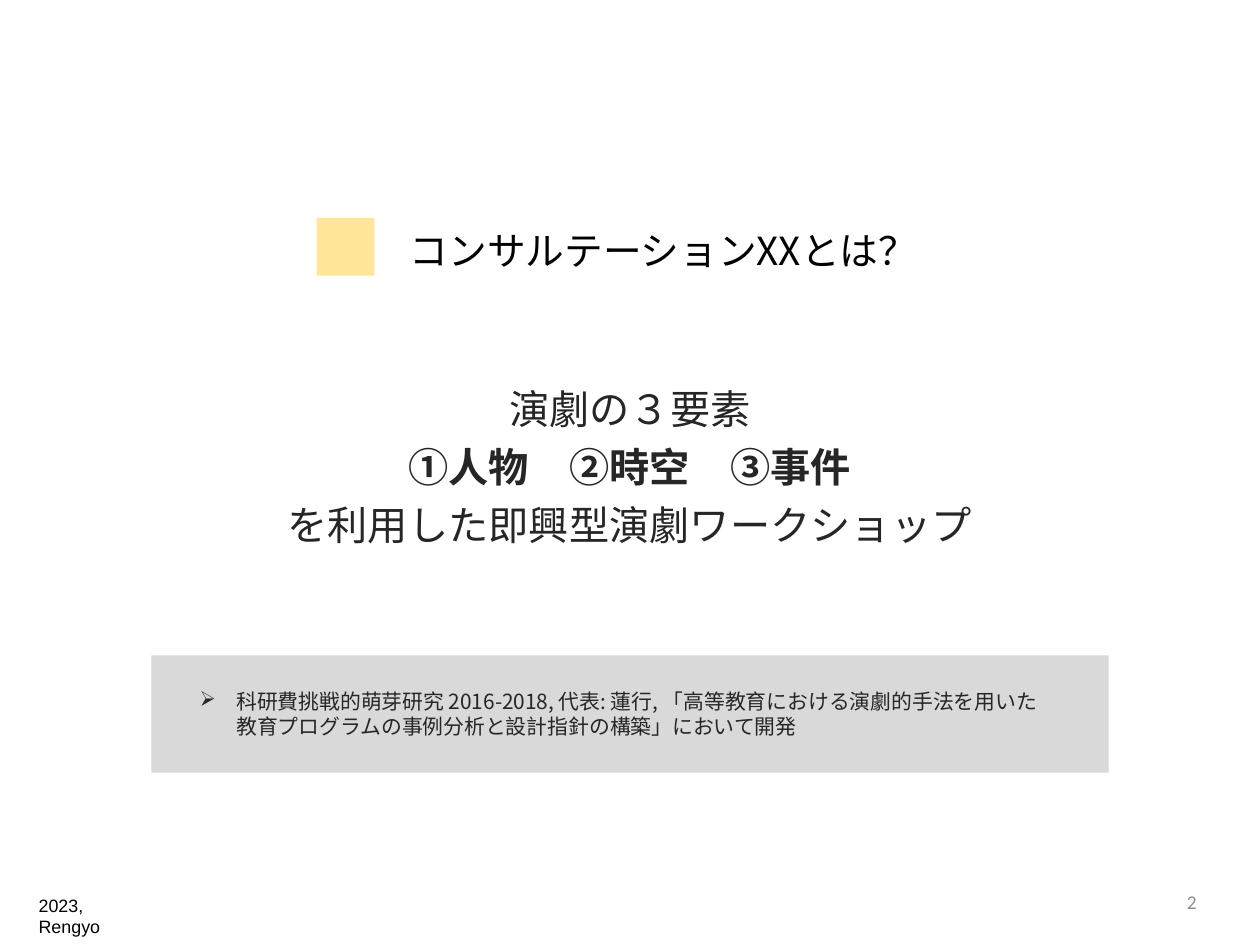
from lxml.etree import SubElement
from pptx import Presentation
from pptx.dml.color import RGBColor
from pptx.enum.shapes import MSO_SHAPE as SHAPE
from pptx.enum.text import MSO_ANCHOR as ANCHOR, MSO_AUTO_SIZE as AUTO, PP_ALIGN as ALIGN
from pptx.oxml.ns import qn
from pptx.util import Pt

CJK = "Noto Sans CJK JP"


def rgb(value):
    """Turn a hex string into a colour."""
    return RGBColor.from_string(value)


def place(sp, x, y, w, h):
    """Move and size a shape, in points."""
    sp.left, sp.top, sp.width, sp.height = Pt(x), Pt(y), Pt(w), Pt(h)
    return sp


def frame(sp, anchor=ANCHOR.TOP, margins=(7.2, 3.6, 7.2, 3.6)):
    """Prepare the text frame of a shape."""
    tf = sp.text_frame
    tf.word_wrap, tf.auto_size, tf.vertical_anchor = True, AUTO.NONE, anchor
    tf.margin_left, tf.margin_top, tf.margin_right, tf.margin_bottom = map(Pt, margins)
    return tf


def write(p, text, size, font=CJK, color="262626", bold=False,
          align=ALIGN.LEFT, line=None, after=0, bullet=None, indent=(0, 0)):
    """Fill and format one paragraph; a vertical tab breaks the line."""
    p.text = text
    p.alignment = align
    p.space_before, p.space_after = Pt(0), Pt(after)
    if line:
        p.line_spacing = Pt(line)
    for r in p.runs:
        r.font.size, r.font.bold, r.font.name = Pt(size), bold, font
        r.font.color.rgb = rgb(color)
        SubElement(r.font._element, qn("a:ea"), typeface=font)
    pPr = p._p.get_or_add_pPr()
    pPr.set("marL", str(Pt(indent[0])))
    pPr.set("indent", str(Pt(indent[1])))
    if bullet:
        SubElement(pPr, qn("a:buChar"), char=bullet)
    else:
        SubElement(pPr, qn("a:buNone"))


def add_box(s, x, y, w, h, fill):
    """Add a plain filled rectangle."""
    sp = s.shapes.add_shape(SHAPE.RECTANGLE, Pt(x), Pt(y), Pt(w), Pt(h))
    sp.shadow.inherit = False
    sp.fill.solid()
    sp.fill.fore_color.rgb = rgb(fill)
    sp.line.fill.background()
    return sp


def add_label(s, x, y, w, h, text, anchor=ANCHOR.TOP, **fmt):
    """Add a text box with one paragraph."""
    sp = s.shapes.add_textbox(Pt(x), Pt(y), Pt(w), Pt(h))
    write(frame(sp, anchor).paragraphs[0], text, **fmt)


def add_title(s, text):
    """Write the title beside its square marker."""
    add_box(s, 181, 124.5, 33, 33, "FFE699")
    sp = place(s.shapes.title, 227, 126, 305, 60)
    write(frame(sp).paragraphs[0], text, 22.1, color="000000", line=26.3)


def add_body(s, lines):
    """Write the centred body lines, given as text and bold flag."""
    sp = place(s.placeholders[1], 114, 183, 492, 176)
    tf = frame(sp, margins=(4, 39, 4, 2))
    for i, (text, bold) in enumerate(lines):
        p = tf.add_paragraph() if i else tf.paragraphs[0]
        write(p, text, 23, bold=bold, align=ALIGN.CENTER, line=25, after=8.1)


def add_note(s, text):
    """Add the grey band with its bulleted note."""
    sp = add_box(s, 86.5, 374.5, 547, 67, "D9D9D9")
    tf = frame(sp, ANCHOR.MIDDLE, (6.5, 3, 6.5, 3))
    write(tf.paragraphs[0], text, 11.9, line=14.3, bullet="➢", indent=(42, -21))


def main():
    """Build the slide."""
    prs = Presentation()
    prs.slide_width, prs.slide_height = Pt(720), Pt(540)
    s = prs.slides.add_slide(prs.slide_layouts[1])
    add_title(s, "コンサルテーションXXとは？")
    add_body(s, [("演劇の３要素", False),
                 ("①人物　②時空　③事件", True),
                 ("を利用した即興型演劇ワークショップ", False)])
    add_note(s, "科研費挑戦的萌芽研究 2016-2018, 代表: 蓮行, 「高等教育における演劇的手法を用いた"
                "\v教育プログラムの事例分析と設計指針の構築」において開発")
    add_label(s, 15, 507.5, 72, 32, "2023, Rengyo", size=10.2, font="Arial", color="000000")
    add_label(s, 565, 500.5, 126, 29, "2", ANCHOR.MIDDLE, size=11.1, font="Calibri",
              color="8C8C8C", align=ALIGN.RIGHT)
    prs.save("out.pptx")


if __name__ == "__main__":
    main()
